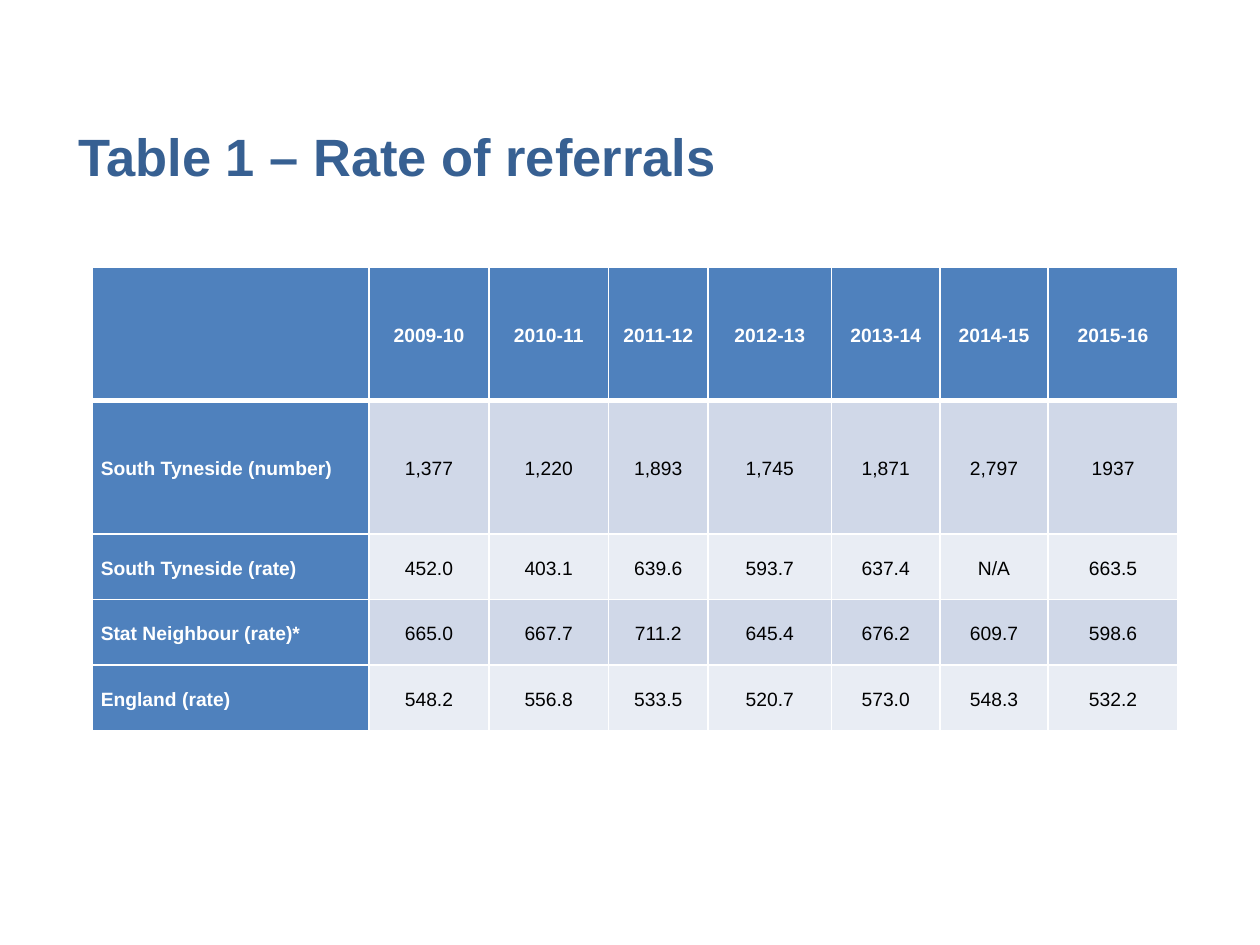
from lxml import etree
from pptx import Presentation
from pptx.dml.color import RGBColor
from pptx.enum import text
from pptx.oxml.ns import qn
from pptx.util import Inches, Pt

# Content
TITLE = "Table 1 – Rate of referrals"
REFERRALS = [
    ["", "2009-10", "2010-11", "2011-12", "2012-13", "2013-14", "2014-15", "2015-16"],
    ["South Tyneside (number)", "1,377", "1,220", "1,893", "1,745", "1,871", "2,797", "1937"],
    ["South Tyneside (rate)", "452.0", "403.1", "639.6", "593.7", "637.4", "N/A", "663.5"],
    ["Stat Neighbour (rate)*", "665.0", "667.7", "711.2", "645.4", "676.2", "609.7", "598.6"],
    ["England (rate)", "548.2", "556.8", "533.5", "520.7", "573.0", "548.3", "532.2"],
]
COLUMN_WIDTHS = [2.2, 0.95, 0.95, 0.79, 0.98, 0.86, 0.86, 1.03]
ROW_HEIGHTS = [1.06, 1.06, 0.52, 0.52, 0.52]

# Style
FONT = "Arial"
TITLE_BLUE, HEADER_BLUE = "376092", "4F81BD"
BANDS = ["E9EDF4", "D0D8E8"]
WHITE, BLACK = "FFFFFF", "000000"


def style_font(font, size, color, bold):
    font.name, font.size, font.bold = FONT, Pt(size), bold
    font.color.rgb = RGBColor.from_string(color)


def add_borders(cell, widths):
    """Draw white borders; they must come before the fill in the cell properties."""
    properties = cell._tc.get_or_add_tcPr()
    for position, (side, width) in enumerate(widths.items()):
        line = etree.Element(qn(f"a:ln{side}"), w=str(Pt(width)))
        fill = etree.SubElement(line, qn("a:solidFill"))
        etree.SubElement(fill, qn("a:srgbClr"), val=WHITE)
        properties.insert(position, line)


def fill_cell(cell, value, row, column):
    is_header = row == 0 or column == 0
    cell.fill.solid()
    cell.fill.fore_color.rgb = RGBColor.from_string(HEADER_BLUE if is_header else BANDS[row % 2])
    cell.vertical_anchor = text.MSO_ANCHOR.MIDDLE
    cell.margin_left = cell.margin_right = Inches(0.07)
    cell.margin_top = cell.margin_bottom = 0
    # A thick rule separates the years from the figures
    add_borders(cell, {"L": 1, "R": 1, "T": 3 if row == 1 else 1, "B": 3 if row == 0 else 1})

    if value:
        paragraph = cell.text_frame.paragraphs[0]
        paragraph.text = value
        paragraph.alignment = text.PP_ALIGN.CENTER if column else text.PP_ALIGN.LEFT
        paragraph.line_spacing = 1.15
        paragraph.space_after = Pt(10)
        style_font(paragraph.runs[0].font, 11, WHITE if is_header else BLACK, is_header)


def main():
    presentation = Presentation()
    presentation.slide_width, presentation.slide_height = Inches(10), Inches(7.5)
    slide = presentation.slides.add_slide(presentation.slide_layouts[5])

    # Title
    title = slide.shapes.title
    title.left, title.top = Inches(0.52), Inches(0.93)
    title.width, title.height = Inches(9.18), Inches(0.61)
    title.text_frame.text = TITLE
    title.text_frame.vertical_anchor = text.MSO_ANCHOR.MIDDLE
    heading = title.text_frame.paragraphs[0]
    heading.alignment = text.PP_ALIGN.LEFT
    style_font(heading.runs[0].font, 30, TITLE_BLUE, True)

    # Referrals table
    table = slide.shapes.add_table(
        len(ROW_HEIGHTS), len(COLUMN_WIDTHS), Inches(0.73), Inches(2.12),
        Inches(sum(COLUMN_WIDTHS)), Inches(sum(ROW_HEIGHTS))).table
    table.first_col = True
    for column, width in zip(table.columns, COLUMN_WIDTHS):
        column.width = Inches(width)
    for row, height in zip(table.rows, ROW_HEIGHTS):
        row.height = Inches(height)
    for row, values in enumerate(REFERRALS):
        for column, value in enumerate(values):
            fill_cell(table.cell(row, column), value, row, column)

    presentation.save("out.pptx")


if __name__ == "__main__":
    main()
